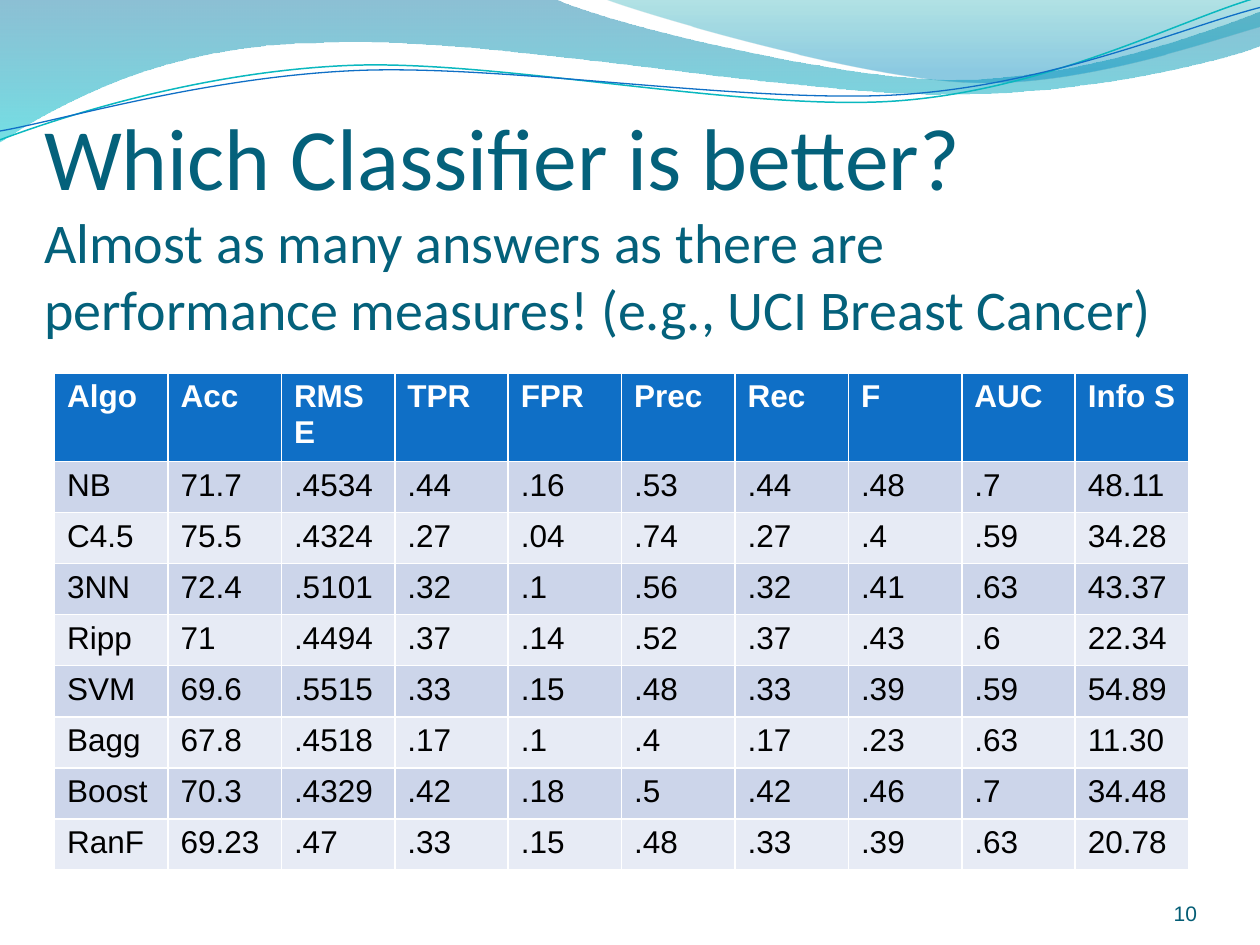
import math

import pptx
import pptx.dml.color
import pptx.enum.text
import pptx.oxml.ns
import pptx.util
from lxml import etree

Pt = pptx.util.Pt
qn = pptx.oxml.ns.qn
Anchor = pptx.enum.text.MSO_ANCHOR
Align = pptx.enum.text.PP_ALIGN

WHITE, BLUE, TEAL = "FFFFFF", "0F6FC6", "04617B"
BANDS = ["CCD5EA", "E7EBF5"]

# Paths in points: a pair is a straight segment, six numbers a Bezier curve.
# Gradient stops are (position %, colour, opacity %).
BROAD = [(0, -0.7), (316.8, -0.7), (342.7, 12.2, 478.1, 45.4, 545.8, 45.4),
         (614.2, 45.4, 689.8, 18.7, 720, 6.5), (720.7, 25.9),
         (707.8, 31.7, 626.4, 54.7, 537.1, 54),
         (447.8, 54, 275, 20.2, 185, 24.5),
         (92.9, 25.2, 33.1, 59.8, -0.7, 81.4)]
CORNER = [(344.9, -0.7), (366.5, 7.9, 491, 44.6, 553.7, 46.8),
          (616.3, 49.7, 691.9, 23, 720, 15.1), (720, 0)]
WAVES = [(BROAD, [(0, "0074A1", 45), (100, "00C6CF", 55)]),
         (CORNER, [(0, "00A1A9", 30), (80, "008BBF", 45)])]
TILT = -2.7
CURVES = [
    ([(0, 79.9), (34.6, 67, 113.8, 41, 199.4, 37.4),
      (284.4, 33.8, 427, 64.1, 513.4, 57.6),
      (599.8, 51.1, 675.4, 10.8, 718.6, -1.4)],
     (359.3, 41.4), "0AB8BF", 0.85),
    ([(0, 74.9), (33.8, 69.1, 118.1, 43.9, 203.8, 40.3),
      (290.2, 36.7, 429.8, 59.8, 516.2, 54),
      (601.9, 48.2, 677.5, 15.1, 720, 4.3)],
     (359.6, 42.5), BLUE, 0.75),
]

SCORES = [line.split("|") for line in """\
Algo|Acc|RMSE|TPR|FPR|Prec|Rec|F|AUC|Info S
NB|71.7|.4534|.44|.16|.53|.44|.48|.7|48.11
C4.5|75.5|.4324|.27|.04|.74|.27|.4|.59|34.28
3NN|72.4|.5101|.32|.1|.56|.32|.41|.63|43.37
Ripp|71|.4494|.37|.14|.52|.37|.43|.6|22.34
SVM|69.6|.5515|.33|.15|.48|.33|.39|.59|54.89
Bagg|67.8|.4518|.17|.1|.4|.17|.23|.63|11.30
Boost|70.3|.4329|.42|.18|.5|.42|.46|.7|34.48
RanF|69.23|.47|.33|.15|.48|.33|.39|.63|20.78""".splitlines()]


def color(code):
    return pptx.dml.color.RGBColor.from_string(code)


def write(para, text, size=18, font="Arial", ink="000000", bold=False,
          align=None):
    run = para.add_run()
    run.text = text
    run.font.size = Pt(size)
    run.font.name = font
    run.font.bold = bold
    run.font.color.rgb = color(ink)
    if align is not None:
        para.alignment = align


def add_box(slide, box, top=0):
    """Add a wrapping, bottom-anchored text box; return its paragraph."""
    frame = slide.shapes.add_textbox(*map(Pt, box)).text_frame
    frame.word_wrap = True
    frame.vertical_anchor = Anchor.BOTTOM
    frame.margin_left = frame.margin_right = frame.margin_bottom = 0
    frame.margin_top = Pt(top)
    return frame.paragraphs[0]


def pairs(part):
    return list(zip(part[::2], part[1::2]))


def turn(path, center, angle):
    """Rotate all points of a path clockwise about a center."""
    cos, sin = math.cos(math.radians(angle)), math.sin(math.radians(angle))
    cx, cy = center
    return [tuple(value for x, y in pairs(part)
                  for value in (cx + (x - cx) * cos - (y - cy) * sin,
                                cy + (x - cx) * sin + (y - cy) * cos))
            for part in path]


def add_path(slide, path, left, top, close):
    """Build an outline through all nodes, then bend its curved parts."""
    points = [(Pt(left + x), Pt(top + y))
              for part in path for x, y in pairs(part)]
    maker = slide.shapes.build_freeform(*points[0])
    maker.add_line_segments(points[1:], close=close)
    shape = maker.convert_to_shape()
    shape.shadow.inherit = False
    lines = iter(list(shape._element.iter(qn("a:lnTo"))))
    for part in path[1:]:
        first = next(lines)
        if len(part) == 6:
            curve = etree.Element(qn("a:cubicBezTo"))
            first.addprevious(curve)
            for line in (first, next(lines), next(lines)):
                curve.append(line[0])
                line.getparent().remove(line)
    return shape


def fade(shape, stops):
    """Fill from top to bottom with partly clear colours."""
    shape.fill.gradient()
    grad = shape._element.spPr.find(qn("a:gradFill"))
    for child in list(grad):
        grad.remove(child)
    group = etree.SubElement(grad, qn("a:gsLst"))
    for place, code, alpha in stops:
        stop = etree.SubElement(group, qn("a:gs"), pos=str(place * 1000))
        tone = etree.SubElement(stop, qn("a:srgbClr"), val=code)
        etree.SubElement(tone, qn("a:alpha"), val=str(alpha * 1000))
    etree.SubElement(grad, qn("a:lin"), ang="5400000", scaled="0")


def add_waves(slide, left, top):
    for path, stops in WAVES:
        wave = add_path(slide, path, left, top, True)
        fade(wave, stops)
        wave.line.fill.background()
    for path, center, code, width in CURVES:
        curve = add_path(slide, turn(path, center, -TILT), left, top, False)
        curve.rotation = TILT
        curve.fill.background()
        curve.line.color.rgb = color(code)
        curve.line.width = Pt(width)


def add_title(slide, box):
    para = add_box(slide, box, top=3.6)
    write(para, "Which Classifier is better?", size=50, font="Calibri",
          ink=TEAL)
    para.add_line_break()
    write(para, "Almost as many answers as there are performance measures! "
          "(e.g., UCI Breast Cancer)", size=32, font="Calibri", ink=TEAL)


def add_scores(slide, box):
    """Fill the score table; its default style draws the white borders."""
    rows, cols = len(SCORES), len(SCORES[0])
    table = slide.shapes.add_table(rows, cols, *map(Pt, box)).table
    for col in table.columns:
        col.width = Pt(box[2] / cols)
    for r, texts in enumerate(SCORES):
        table.rows[r].height = Pt(box[3] / rows)
        head = r == 0
        for c, text in enumerate(texts):
            cell = table.cell(r, c)
            cell.fill.solid()
            cell.fill.fore_color.rgb = color(BLUE if head
                                             else BANDS[(r - 1) % 2])
            write(cell.text_frame.paragraphs[0], text, bold=head,
                  ink=WHITE if head else "000000")


def add_number(slide, box):
    write(add_box(slide, box), "10", size=12, ink="045D75",
          align=Align.RIGHT)


def main():
    deck = pptx.Presentation()
    deck.slide_width, deck.slide_height = Pt(720), Pt(540)
    slide = deck.slides.add_slide(deck.slide_layouts[6])
    add_waves(slide, 0, 0)
    add_title(slide, (25.2, 105.5, 648, 90))
    add_scores(slide, (31.2, 213.2, 648, 262.8))
    add_number(slide, (624, 500.4, 60, 28.8))
    deck.save("out.pptx")


if __name__ == "__main__":
    main()
